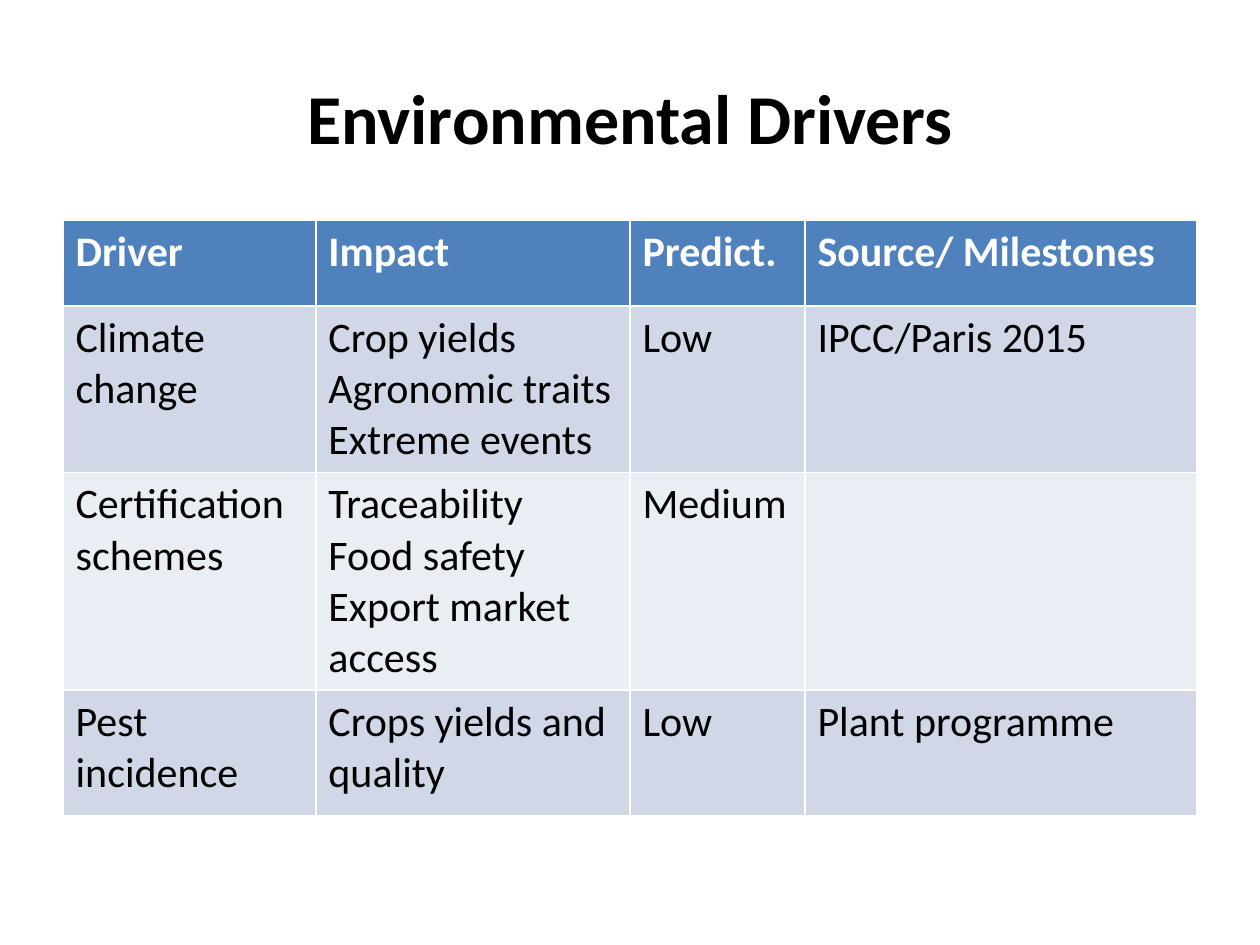
from pptx import Presentation
from pptx.dml.color import RGBColor
from pptx.enum.text import MSO_ANCHOR, PP_ALIGN
from pptx.util import Pt

FONT = "Calibri"
HEADER_FILL = "4F81BD"
BAND_FILLS = ["E9EDF4", "D0D8E8"]
COLUMN_WIDTHS = [144.5, 179.5, 100, 224]
ROW_HEIGHTS = [49, 95, 124, 72]
DRIVERS = [
    ["Driver", "Impact", "Predict.", "Source/ Milestones"],
    ["Climate change", "Crop yields\nAgronomic traits\nExtreme events", "Low", "IPCC/Paris 2015"],
    ["Certification schemes", "Traceability\nFood safety\nExport market access", "Medium", ""],
    ["Pest incidence", "Crops yields and quality", "Low", "Plant programme"],
]


def paint(fill, color):
    fill.solid()
    fill.fore_color.rgb = RGBColor.from_string(color)


def style_text(frame, size, color, bold):
    for paragraph in frame.paragraphs:
        paragraph.font.size = Pt(size)
        for run in paragraph.runs:
            run.font.name = FONT
            run.font.size = Pt(size)
            run.font.bold = bold
            paint(run.font.fill, color)


prs = Presentation()
prs.slide_width, prs.slide_height = Pt(720), Pt(540)
slide = prs.slides.add_slide(prs.slide_layouts[5])

# Title
title = slide.shapes.title
title.left, title.top, title.width, title.height = Pt(36), Pt(21.6), Pt(648), Pt(90)
paint(title.fill, "FFFFFF")
title.text_frame.text = "Environmental Drivers"
title.text_frame.vertical_anchor = MSO_ANCHOR.MIDDLE
title.text_frame.paragraphs[0].alignment = PP_ALIGN.CENTER
style_text(title.text_frame, 40, "000000", True)

# Drivers table: the default table style supplies the white rules
drivers = slide.shapes.add_table(
    len(DRIVERS), len(COLUMN_WIDTHS),
    Pt(36), Pt(126), Pt(sum(COLUMN_WIDTHS)), Pt(sum(ROW_HEIGHTS)),
).table
for column, width in zip(drivers.columns, COLUMN_WIDTHS):
    column.width = Pt(width)

for r, (entries, height) in enumerate(zip(DRIVERS, ROW_HEIGHTS)):
    drivers.rows[r].height = Pt(height)
    is_header = r == 0
    for c, entry in enumerate(entries):
        cell = drivers.cell(r, c)
        paint(cell.fill, HEADER_FILL if is_header else BAND_FILLS[r % 2])
        cell.text_frame.text = entry
        style_text(cell.text_frame, 24, "FFFFFF" if is_header else "000000", is_header)

prs.save("out.pptx")
